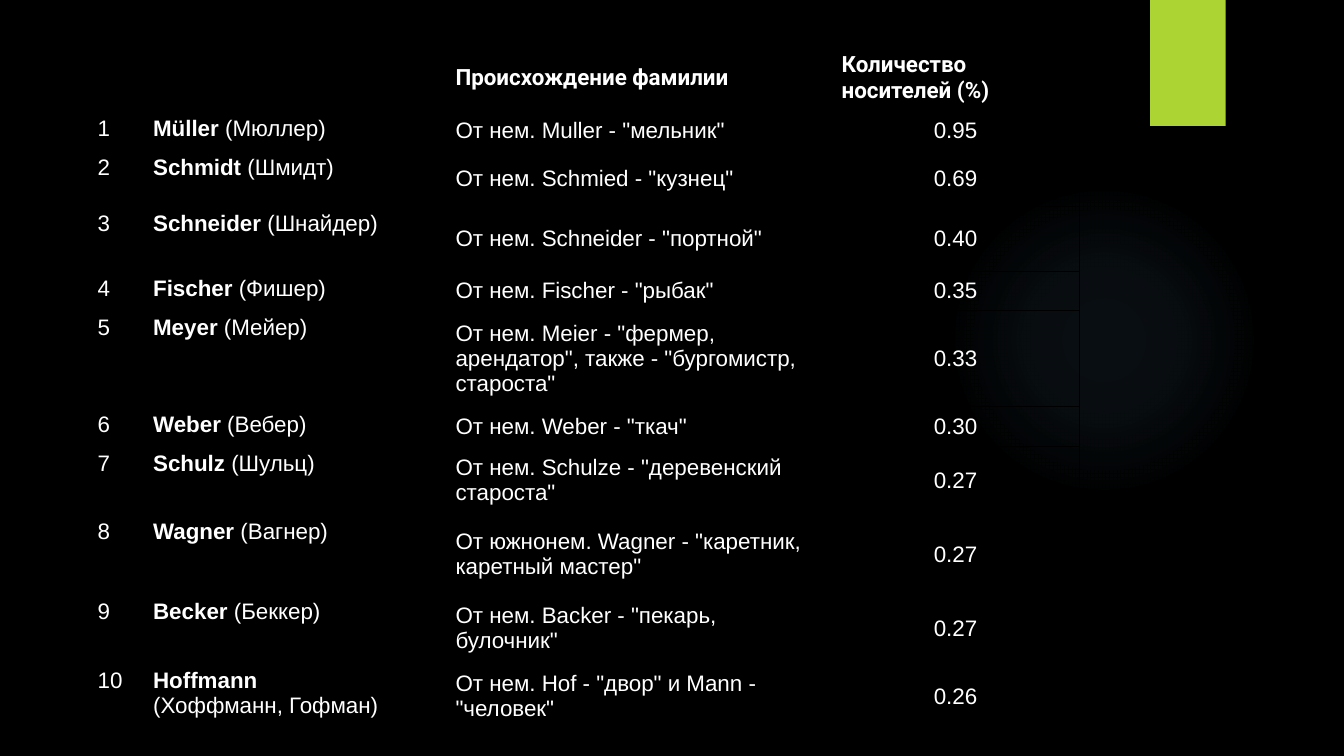
from lxml.etree import SubElement
from pptx import Presentation
from pptx.dml.color import RGBColor
from pptx.enum.shapes import MSO_SHAPE
from pptx.enum.text import MSO_ANCHOR, PP_ALIGN
from pptx.oxml import parse_xml
from pptx.oxml.ns import nsdecls, qn
from pptx.util import Pt

HUES = {"back": "000000", "glow": "7AC4F0", "tab": "ACD433", "text": "FFFFFF"}
COLS = [39.6, 216, 275.8, 177.1]
ROWS = [48, 28, 40, 46, 28, 69, 28, 49, 57, 49, 48]
HEADS = ["Происхождение фамилии", "Количество носителей (%)"]
NAMES = [
    ("Müller", " (Мюллер)", 'От нем. Muller - "мельник"', "0.95"),
    ("Schmidt", " (Шмидт)", 'От нем. Schmied - "кузнец"', "0.69"),
    ("Schneider", " (Шнайдер)", 'От нем. Schneider - "портной"', "0.40"),
    ("Fischer", " (Фишер)", 'От нем. Fischer - "рыбак"', "0.35"),
    ("Meyer", " (Мейер)",
     'От нем. Meier - "фермер, арендатор", также - "бургомистр, староста"', "0.33"),
    ("Weber", " (Вебер)", 'От нем. Weber - "ткач"', "0.30"),
    ("Schulz", " (Шульц)", 'От нем. Schulze - "деревенский староста"', "0.27"),
    ("Wagner", " (Вагнер)", 'От южнонем. Wagner - "каретник, каретный мастер"', "0.27"),
    ("Becker", " (Беккер)", 'От нем. Backer - "пекарь, булочник"', "0.27"),
    ("Hoffmann", "\n(Хоффманн, Гофман)", 'От нем. Hof - "двор" и Mann - "человек"', "0.26"),
]


def tint(name):
    return RGBColor.from_string(HUES[name])


def add_shape(slide, kind, x, y, w, h, hue):
    shape = slide.shapes.add_shape(kind, Pt(x), Pt(y), Pt(w), Pt(h))
    shape.fill.solid()
    shape.fill.fore_color.rgb = tint(hue)
    shape.line.fill.background()
    shape.shadow.inherit = False
    return shape


def add_glow(slide):
    props = add_shape(slide, MSO_SHAPE.OVAL, 677.5, 131.8, 221.8, 221.8, "glow")._element.spPr
    stops = "".join(
        f'<a:gs pos="{pos * 1000}"><a:srgbClr val="{HUES["glow"]}">'
        f'<a:alpha val="{alpha * 1000}"/></a:srgbClr></a:gs>'
        for pos, alpha in [(0, 7), (36, 6), (69, 0)])
    grad = parse_xml(
        f'<a:gradFill {nsdecls("a")} rotWithShape="1"><a:gsLst>{stops}</a:gsLst>'
        '<a:path path="circle"><a:fillToRect l="50000" t="50000" r="50000" b="50000"/>'
        '</a:path></a:gradFill>')
    props.replace(props.find(qn("a:solidFill")), grad)


def add_tab(slide):
    tab = add_shape(slide, MSO_SHAPE.RECTANGLE, 821.5, 0, 54, 90, "tab")
    cast = SubElement(
        tab._element.spPr.find(qn("a:effectLst")), qn("a:outerShdw"),
        blurRad=str(Pt(3)), dist=str(Pt(2)), dir="5400000", rotWithShape="0")
    hue = SubElement(cast, qn("a:srgbClr"), val=HUES["back"])
    SubElement(hue, qn("a:alpha"), val="45000")


def add_edges(cell):
    cell.fill.background()
    props = cell._tc.get_or_add_tcPr()
    for spot, side in enumerate("LRTB"):
        props.insert(spot, parse_xml(
            f'<a:ln{side} {nsdecls("a")} w="{Pt(0.75)}"><a:solidFill>'
            f'<a:srgbClr val="{HUES["back"]}"/></a:solidFill></a:ln{side}>'))


def add_run(para, text, bold=False, face="Arial"):
    run = para.add_run()
    run.text = text
    font = run.font
    font.name, font.size, font.bold = face, Pt(16), bold
    font.color.rgb = tint("text")


def put_name(cell, name, gloss):
    para = cell.text_frame.paragraphs[0]
    add_run(para, name, bold=True)
    if gloss.startswith("\n"):
        para.add_line_break()
    add_run(para, gloss.lstrip("\n"))


def put_text(cell, text, mid=True, align=PP_ALIGN.LEFT, **style):
    if mid:
        cell.vertical_anchor = MSO_ANCHOR.MIDDLE
    para = cell.text_frame.paragraphs[0]
    para.alignment = align
    add_run(para, text, **style)


def add_names(slide):
    table = slide.shapes.add_table(
        len(ROWS), len(COLS), Pt(62.6), Pt(31.7), Pt(sum(COLS)), Pt(sum(ROWS))).table
    table.first_row = table.horz_banding = False
    for col, width in zip(table.columns, COLS):
        col.width = Pt(width)
    for row, height in zip(table.rows, ROWS):
        row.height = Pt(height)
    for cell in table.iter_cells():
        add_edges(cell)

    # Header row
    for col, head in enumerate(HEADS, 2):
        put_text(table.cell(0, col), head, bold=True, face="Roboto")

    # One row per surname
    for row, (name, gloss, root, share) in enumerate(NAMES, 1):
        put_text(table.cell(row, 0), str(row), mid=False)
        put_name(table.cell(row, 1), name, gloss)
        put_text(table.cell(row, 2), root)
        put_text(table.cell(row, 3), share, align=PP_ALIGN.CENTER)


def main():
    deck = Presentation()
    deck.slide_width, deck.slide_height = Pt(960), Pt(540)
    slide = deck.slides.add_slide(deck.slide_layouts[6])

    # Backdrop
    slide.background.fill.solid()
    slide.background.fill.fore_color.rgb = tint("back")
    add_glow(slide)
    add_tab(slide)

    # Surname table
    add_names(slide)
    deck.save("out.pptx")


if __name__ == "__main__":
    main()
